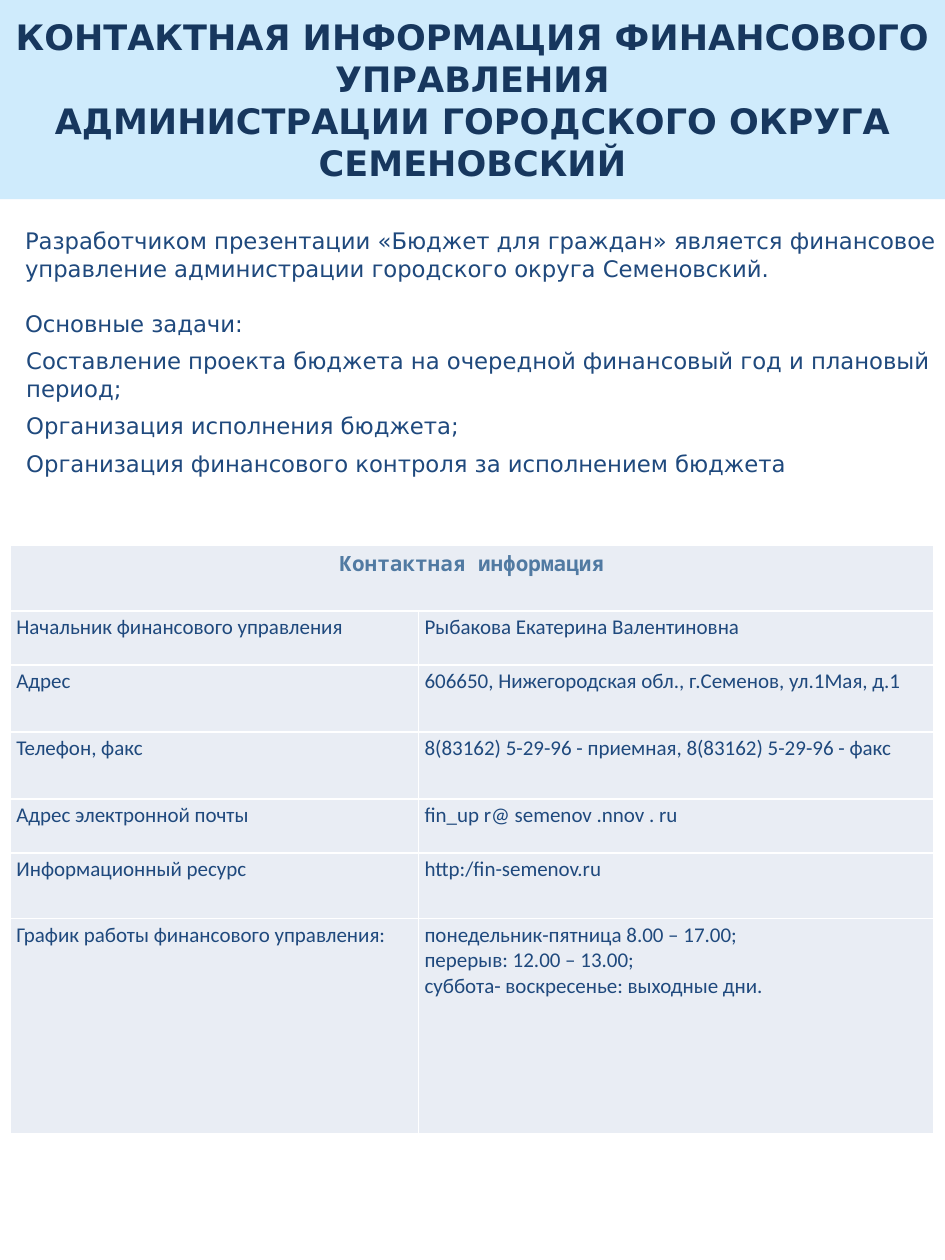
from dataclasses import dataclass

from lxml import etree
from pptx import Presentation
from pptx import util as u
from pptx.dml.color import RGBColor
from pptx.enum import text
from pptx.oxml import ns


@dataclass(frozen=True)
class Style:
    font: str
    size: float
    color: str
    bold: bool = False
    align: text.PP_ALIGN = text.PP_ALIGN.LEFT


@dataclass(frozen=True)
class Theme:
    banner: str = "C6E7FC"
    banner_opacity: int = 83
    cell: str = "E9EDF4"
    border: str = "FFFFFF"
    title: Style = Style("DejaVu Sans", 20, "17375E", True, text.PP_ALIGN.CENTER)
    body: Style = Style("DejaVu Sans", 13, "1F497D")
    heading: Style = Style("Noto Sans Mono", 12, "517AA2", True, text.PP_ALIGN.CENTER)
    contact: Style = Style("Calibri", 12, "1F497D")


@dataclass(frozen=True)
class BodyLine:
    words: str
    indent: float = 0.11
    before: float = 5.8


@dataclass(frozen=True)
class Contact:
    label: str
    value: str
    height: float


THEME = Theme()
LINE_PITCH = 15.7
TITLE = ("КОНТАКТНАЯ ИНФОРМАЦИЯ ФИНАНСОВОГО УПРАВЛЕНИЯ\n"
         "АДМИНИСТРАЦИИ ГОРОДСКОГО ОКРУГА СЕМЕНОВСКИЙ")
BODY = [
    BodyLine("Разработчиком презентации «Бюджет для граждан» является финансовое "
             "управление администрации городского округа Семеновский.", 0.1),
    BodyLine("Основные задачи:", 0.1, LINE_PITCH),
    BodyLine("Составление проекта бюджета на очередной финансовый год и плановый период;"),
    BodyLine("Организация исполнения бюджета;"),
    BodyLine("Организация финансового контроля за исполнением бюджета"),
]
HEADING = "Контактная информация"
HEADING_HEIGHT = 0.52
COLUMNS = (3.24, 4.09)
CONTACTS = [
    Contact("Начальник финансового управления", "Рыбакова Екатерина Валентиновна", 0.43),
    Contact("Адрес", "606650, Нижегородская обл., г.Семенов, ул.1Мая, д.1", 0.53),
    Contact("Телефон, факс", "8(83162) 5-29-96 - приемная, 8(83162) 5-29-96 - факс", 0.53),
    Contact("Адрес электронной почты", "fin_up r@ semenov .nnov . ru", 0.43),
    Contact("Информационный ресурс", "http:/fin-semenov.ru", 0.52),
    Contact("График работы финансового управления:",
            "понедельник-пятница 8.00 – 17.00;\nперерыв: 12.00 – 13.00;\n"
            "суббота- воскресенье: выходные дни.", 1.71),
]


def write(frame, words: str, style: Style) -> None:
    frame.text = words
    for para in frame.paragraphs:
        para.alignment = style.align
        for span in para.runs:
            span.font.name = style.font
            span.font.size = u.Pt(style.size)
            span.font.bold = style.bold
            span.font.color.rgb = RGBColor.from_string(style.color)


def place(shape, left: float, top: float, width: float, height: float) -> None:
    shape.left, shape.top = u.Inches(left), u.Inches(top)
    shape.width, shape.height = u.Inches(width), u.Inches(height)


def draw_title(page) -> None:
    title = page.shapes.title
    place(title, 0, 0, 7.5, 1.58)
    title.fill.solid()
    title.fill.fore_color.rgb = RGBColor.from_string(THEME.banner)
    color = title.fill._xPr.find(ns.qn("a:solidFill"))[0]
    etree.SubElement(color, ns.qn("a:alpha"), val=str(THEME.banner_opacity * 1000))
    frame = title.text_frame
    write(frame, TITLE, THEME.title)
    frame.word_wrap = True
    frame.auto_size = text.MSO_AUTO_SIZE.NONE
    frame.vertical_anchor = text.MSO_ANCHOR.MIDDLE


def draw_body(page) -> None:
    box = page.shapes.add_textbox(u.Inches(0), u.Inches(1.75), u.Inches(7.88), u.Inches(2.15))
    frame = box.text_frame
    write(frame, "\n".join(line.words for line in BODY), THEME.body)
    frame.word_wrap = True
    for para, line in zip(frame.paragraphs, BODY):
        para.line_spacing = u.Pt(LINE_PITCH)
        para.space_before = u.Pt(line.before)
        para._p.get_or_add_pPr().set("marL", str(u.Inches(line.indent)))


def style_cell(cell) -> None:
    """Give a cell its margins, borders and fill."""
    cell.margin_left = cell.margin_right = u.Inches(0.05)
    cell.margin_top = cell.margin_bottom = u.Inches(0.03)
    properties = cell._tc.get_or_add_tcPr()
    for side in ("lnL", "lnR", "lnT", "lnB"):
        line = etree.SubElement(properties, ns.qn(f"a:{side}"), w=str(u.Pt(1)))
        fill = etree.SubElement(line, ns.qn("a:solidFill"))
        etree.SubElement(fill, ns.qn("a:srgbClr"), val=THEME.border)
    cell.fill.solid()
    cell.fill.fore_color.rgb = RGBColor.from_string(THEME.cell)


def draw_contacts(page) -> None:
    heights = [HEADING_HEIGHT] + [contact.height for contact in CONTACTS]
    table = page.shapes.add_table(
        len(heights), len(COLUMNS), u.Inches(0.08), u.Inches(4.33),
        u.Inches(sum(COLUMNS)), u.Inches(sum(heights))).table
    table.first_row = table.horz_banding = False
    for column, width in zip(table.columns, COLUMNS):
        column.width = u.Inches(width)
    for row, height in zip(table.rows, heights):
        row.height = u.Inches(height)
    for cell in table.iter_cells():
        style_cell(cell)
    table.cell(0, 0).merge(table.cell(0, 1))
    write(table.cell(0, 0).text_frame, HEADING, THEME.heading)
    for index, contact in enumerate(CONTACTS, start=1):
        for column, words in enumerate((contact.label, contact.value)):
            write(table.cell(index, column).text_frame, words, THEME.contact)


def main() -> None:
    deck = Presentation()
    deck.slide_width, deck.slide_height = u.Inches(7.5), u.Inches(10)
    page = deck.slides.add_slide(deck.slide_layouts.get_by_name("Title Only"))
    draw_title(page)
    draw_body(page)
    draw_contacts(page)
    deck.save("out.pptx")


if __name__ == "__main__":
    main()
